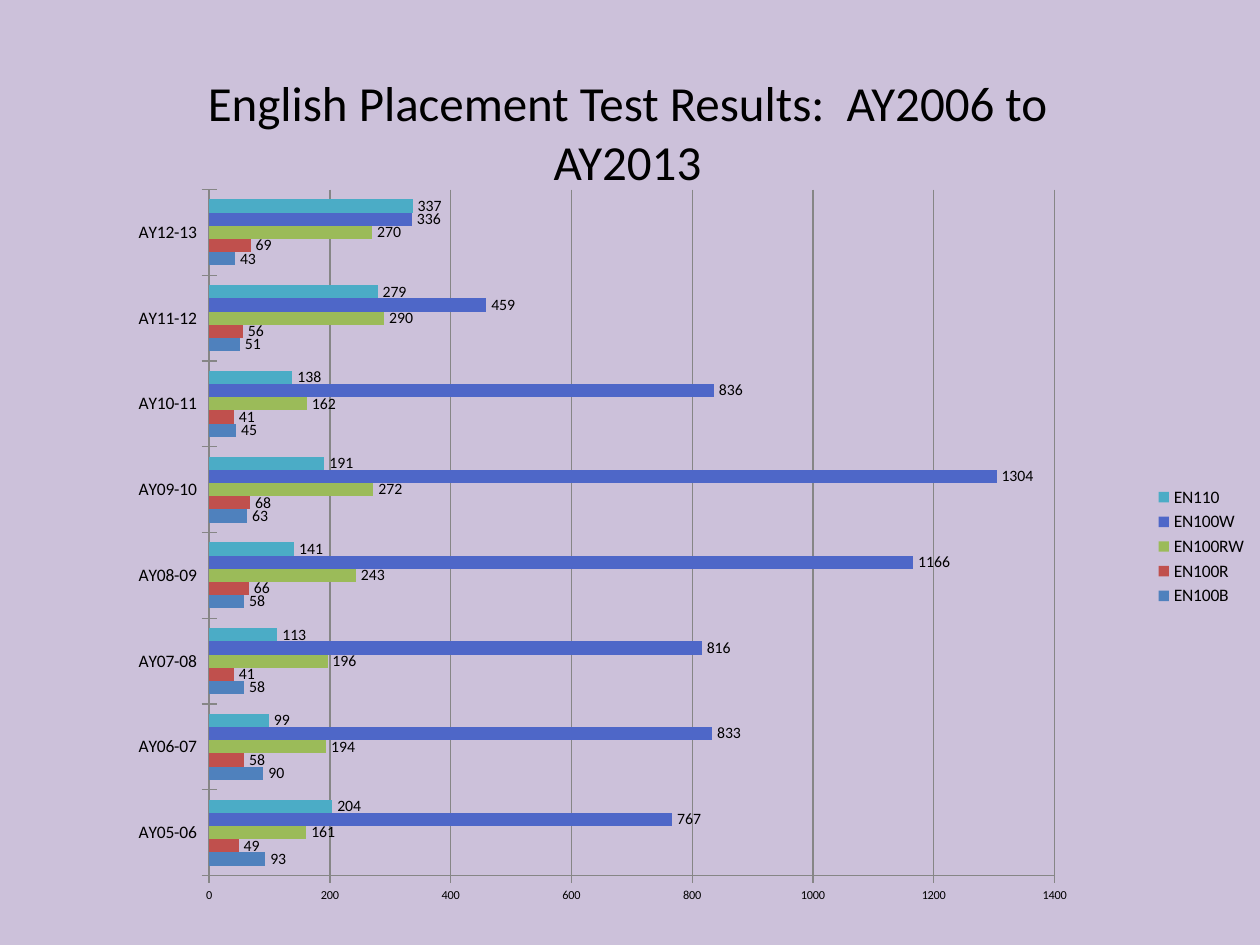
from lxml.etree import SubElement
from pptx import Presentation
from pptx.chart.data import CategoryChartData
from pptx.dml.color import RGBColor
from pptx.enum.chart import (
    XL_CHART_TYPE as ChartType,
    XL_LABEL_POSITION as LabelPosition,
    XL_LEGEND_POSITION as LegendPosition,
    XL_TICK_MARK as TickMark,
)
from pptx.enum.text import MSO_ANCHOR as Anchor, PP_ALIGN as Align
from pptx.oxml.ns import qn
from pptx.util import Inches, Pt

FONT = "Calibri"
COLORS = {
    "background": "CCC1DA",
    "text": "000000",
    "line": "868686",
    "EN100B": "4F81BD",
    "EN100R": "C0504D",
    "EN100RW": "9BBB59",
    "EN100W": "4E67C8",
    "EN110": "4BACC6",
}
YEARS = ["AY05-06", "AY06-07", "AY07-08", "AY08-09",
         "AY09-10", "AY10-11", "AY11-12", "AY12-13"]
PLACEMENTS = {
    "EN100B": [93, 90, 58, 58, 63, 45, 51, 43],
    "EN100R": [49, 58, 41, 66, 68, 41, 56, 69],
    "EN100RW": [161, 194, 196, 243, 272, 162, 290, 270],
    "EN100W": [767, 833, 816, 1166, 1304, 836, 459, 336],
    "EN110": [204, 99, 113, 141, 191, 138, 279, 337],
}
PLOT_AREA = {"x": 0.166, "y": 0, "w": 0.671, "h": 0.961}


def apply(target, values):
    for name, value in values.items():
        setattr(target, name, value)


def color(name):
    return RGBColor.from_string(COLORS[name])


def style_font(font, size):
    apply(font, {"name": FONT, "size": Pt(size), "bold": False})
    font.color.rgb = color("text")


def style_line(line):
    line.color.rgb = color("line")
    line.width = Pt(0.75)


def add_title(slide, text):
    frame = slide.shapes.add_textbox(
        Inches(1.42), Inches(0.42), Inches(7.12), Inches(1.25)).text_frame
    apply(frame, {"word_wrap": True, "vertical_anchor": Anchor.MIDDLE})
    heading = frame.paragraphs[0]
    apply(heading, {"text": text, "alignment": Align.CENTER})
    style_font(heading.runs[0].font, 28)


def style_axis(axis, size, values):
    apply(axis, {"major_tick_mark": TickMark.CROSS,
                 "minor_tick_mark": TickMark.NONE, **values})
    style_font(axis.tick_labels.font, size)
    style_line(axis.format.line)


def place_plot(chart, fractions):
    area = chart.element.find(".//" + qn("c:plotArea"))
    for layout in area.findall(qn("c:layout")):
        area.remove(layout)
    layout = SubElement(area, qn("c:layout"))
    area.insert(0, layout)
    manual = SubElement(layout, qn("c:manualLayout"))
    settings = {"layoutTarget": "inner", "xMode": "edge", "yMode": "edge",
                **fractions}
    for name, value in settings.items():
        SubElement(manual, qn("c:" + name)).set("val", str(value))


def add_results_chart(slide):
    results = CategoryChartData(number_format="General")
    results.categories = YEARS
    for course, counts in PLACEMENTS.items():
        results.add_series(course, counts)
    chart = slide.shapes.add_chart(
        ChartType.BAR_CLUSTERED, Inches(0), Inches(1.5),
        Inches(10), Inches(5.67), results).chart
    apply(chart, {"has_title": False, "has_legend": True})
    style_font(chart.font, 10)
    apply(chart.legend, {"position": LegendPosition.RIGHT,
                         "include_in_layout": False})
    style_font(chart.legend.font, 10)

    bars = chart.plots[0]
    apply(bars, {"gap_width": 150, "overlap": 0,
                 "vary_by_categories": False})
    for course in bars.series:
        course.format.fill.solid()
        course.format.fill.fore_color.rgb = color(course.name)
        labels = course.data_labels
        apply(labels, {"show_value": True,
                       "position": LabelPosition.OUTSIDE_END})
        style_font(labels.font, 9)

    style_axis(chart.category_axis, 10, {"has_major_gridlines": False})
    style_axis(chart.value_axis, 7, {
        "has_major_gridlines": True, "minimum_scale": 0,
        "maximum_scale": 1400, "major_unit": 200})
    style_line(chart.value_axis.major_gridlines.format.line)
    place_plot(chart, PLOT_AREA)


def main():
    deck = Presentation()
    apply(deck, {"slide_width": Inches(10), "slide_height": Inches(7.5)})
    slide = deck.slides.add_slide(deck.slide_layouts[6])
    slide.background.fill.solid()
    slide.background.fill.fore_color.rgb = color("background")
    add_results_chart(slide)
    add_title(slide, "English Placement Test Results:  AY2006 to AY2013")
    deck.save("out.pptx")


if __name__ == "__main__":
    main()
